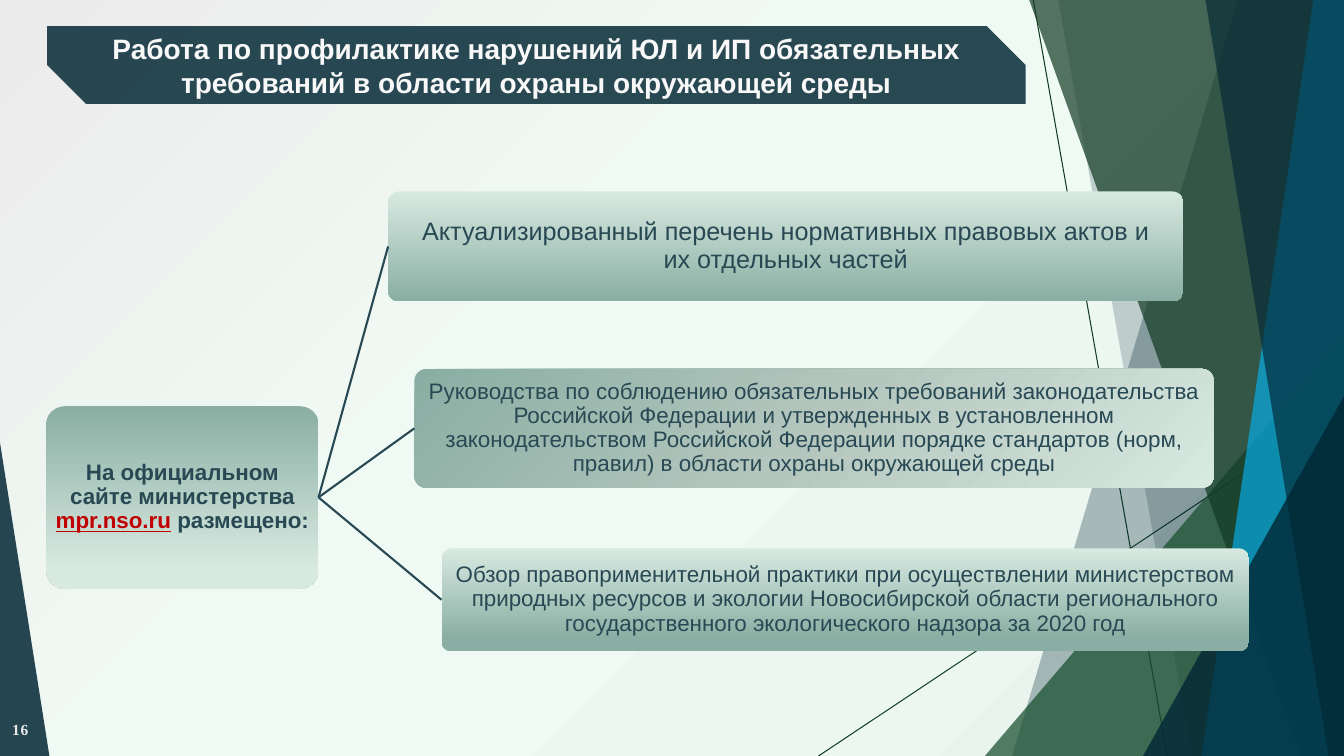
from lxml.etree import SubElement as add_element
from pptx import Presentation
from pptx.dml.color import RGBColor
from pptx.enum.shapes import MSO_CONNECTOR as Connector
from pptx.enum.shapes import MSO_SHAPE as Preset
from pptx.enum.text import MSO_ANCHOR as Anchor
from pptx.enum.text import MSO_AUTO_SIZE as AutoSize
from pptx.enum.text import PP_ALIGN as Align
from pptx.oxml.ns import qn
from pptx.util import Inches, Pt

WIDTH, HEIGHT = Inches(13.333), Inches(7.5)

NAVY = RGBColor(0x02, 0x27, 0x34)
SLATE = RGBColor(0x28, 0x49, 0x53)
FOREST = RGBColor(0x11, 0x3A, 0x22)
GREEN = RGBColor(0x17, 0x4D, 0x2D)
MOSS = RGBColor(0x14, 0x41, 0x26)
AZURE = RGBColor(0x09, 0xAB, 0xE4)
SAGE = RGBColor(0x8A, 0xAE, 0xA3)
SAGE_MID = RGBColor(0xB4, 0xC6, 0xBE)
MINT = RGBColor(0xD7, 0xE9, 0xE1)
MINT_GREY = RGBColor(0xEA, 0xF4, 0xEF)
MINT_WHITE = RGBColor(0xF0, 0xFA, 0xF4)
PALE = RGBColor(0xEB, 0xEB, 0xEB)
WHITE = RGBColor(0xF8, 0xF8, 0xF8)
RED = RGBColor(0xC0, 0x00, 0x00)

TITLE = ("Работа по профилактике нарушений ЮЛ и ИП обязательных "
         "требований в области охраны окружающей среды")
SOURCE = [("На официальном сайте министерства ", SLATE, False),
          ("mpr.nso.ru", RED, True),
          (" размещено:", SLATE, False)]
DOWNWARD = [(0, MINT), (88, SAGE)]
ITEMS = [
    ((28.88, 25.33, 59.18, 14.53), [(0, MINT), (100, SAGE)], 90, 18,
     "Актуализированный перечень нормативных правовых актов и\nих отдельных частей"),
    ((30.83, 48.8, 59.48, 15.73), [(0, SAGE), (50, SAGE_MID), (100, MINT)], 45, 16,
     "Руководства по соблюдению обязательных требований законодательства "
     "Российской Федерации и утвержденных в установленном законодательством "
     "Российской Федерации порядке стандартов (норм, правил) в области охраны "
     "окружающей среды"),
    ((32.85, 72.53, 60.08, 13.6), DOWNWARD, 90, 16,
     "Обзор правоприменительной практики при осуществлении министерством "
     "природных ресурсов и экологии Новосибирской области регионального "
     "государственного экологического надзора за 2020 год"),
]


def across(percent):
    return round(WIDTH * percent / 100)


def down(percent):
    return round(HEIGHT * percent / 100)


def area(left, top, width, height):
    return across(left), down(top), across(width), down(height)


def set_values(target, values):
    for name, value in values.items():
        setattr(target, name, value)


def paint(shape, color, opacity):
    shape.shadow.inherit = False
    shape.line.fill.background()
    shape.fill.solid()
    shape.fill.fore_color.rgb = color
    tint = shape.element.spPr.find(qn("a:solidFill"))[0]
    add_element(tint, qn("a:alpha"), val=str(opacity * 1000))


def paint_gradient(fill, owner, stops, angle=None):
    fill.gradient()
    gradient = owner.find(".//" + qn("a:gradFill"))
    for child in list(gradient):
        gradient.remove(child)
    stop_list = add_element(gradient, qn("a:gsLst"))
    for position, color in stops:
        stop = add_element(stop_list, qn("a:gs"), pos=str(position * 1000))
        add_element(stop, qn("a:srgbClr"), val=str(color))
    if angle is None:
        circle = add_element(gradient, qn("a:path"), {"path": "circle"})
        add_element(circle, qn("a:fillToRect"), l="100000", t="100000")
    else:
        add_element(gradient, qn("a:lin"), ang=str(angle * 60000), scaled="0")


def write(shape, spans, size, inset, font="Arial", bold=False, align=Align.CENTER, spacing=1.0):
    frame = shape.text_frame
    margins = ("margin_left", "margin_right", "margin_top", "margin_bottom")
    set_values(frame, dict.fromkeys(margins, Inches(inset)))
    set_values(frame, {"word_wrap": True, "auto_size": AutoSize.NONE,
                       "vertical_anchor": Anchor.MIDDLE})
    para = frame.paragraphs[0]
    set_values(para, {"alignment": align, "line_spacing": spacing})
    for text, color, underline in spans:
        for index, row in enumerate(text.split("\n")):
            if index:
                para.add_line_break()
            span = para.add_run()
            span.text = row
            set_values(span.font, {"name": font, "size": Pt(size), "bold": bold,
                                   "underline": underline})
            span.font.color.rgb = color
    return para


def add_line(page, start, end, color, weight):
    line = page.shapes.add_connector(Connector.STRAIGHT, across(start[0]), down(start[1]),
                                     across(end[0]), down(end[1]))
    line.line.color.rgb = color
    line.line.width = Pt(weight)
    add_element(line.element.spPr, qn("a:effectLst"))
    return line


def add_shard(page, top, bottom, color, opacity):
    outline = page.shapes.build_freeform(across(top), 0)
    outline.add_line_segments([(WIDTH, 0), (WIDTH, HEIGHT), (across(bottom), HEIGHT)])
    paint(outline.convert_to_shape(), color, opacity)


def add_corner(page, left, top, width, apex, color, opacity):
    corner = page.shapes.add_shape(Preset.ISOSCELES_TRIANGLE,
                                   *area(left, top, width, 100 - top))
    corner.adjustments[0] = apex
    paint(corner, color, opacity)


def add_backdrop(page):
    paint_gradient(page.background.fill, page.element,
                   [(0, MINT_GREY), (58, MINT_WHITE), (100, PALE)])
    add_line(page, (76.88, 0), (86.85, 100), FOREST, 0.75)
    add_line(page, (100, 53.73), (60.9, 100), MOSS, 0.75)
    add_shard(page, 92.1, 75.3, NAVY, 30)
    add_shard(page, 78.75, 88.72, NAVY, 20)
    add_corner(page, 73.28, 44.4, 26.72, 1, GREEN, 72)
    add_shard(page, 76.58, 96.82, FOREST, 70)
    add_shard(page, 97.72, 89.4, AZURE, 70)
    add_shard(page, 89.7, 98.85, NAVY, 65)
    add_corner(page, 85.05, 52.4, 14.95, 1, NAVY, 80)
    add_corner(page, 0, 58.53, 3.68, 0, NAVY, 85)


def add_title(page):
    place = area(3.5, 3.47, 72.82, 10.27)
    banner = page.shapes.add_shape(Preset.SNIP_2_DIAG_RECTANGLE, *place)
    banner.adjustments[0], banner.adjustments[1] = 0, 0.5
    paint(banner, NAVY, 84)
    title = page.shapes.title
    set_values(title, dict(zip(("left", "top", "width", "height"), place)))
    banner.element.addnext(title.element)
    write(title, [(TITLE, WHITE, False)], 20, 0.25, bold=True)


def add_number(page):
    box = page.shapes.add_textbox(*area(0, 93.87, 2.85, 5.33))
    para = write(box, [("16", PALE, False)], 11, 0.1, "Times New Roman", True, Align.RIGHT)
    box.text_frame.margin_left = 0
    para.runs[0].font._element.set("spc", "50")


def add_card(page, place, stops, angle, spans, size, bold=False):
    card = page.shapes.add_shape(Preset.ROUNDED_RECTANGLE, *area(*place))
    card.adjustments[0] = 0.1
    card.shadow.inherit = False
    card.line.fill.background()
    paint_gradient(card.fill, card.element, stops, angle)
    write(card, spans, size, 0.01, bold=bold, spacing=0.9)
    return card


def main():
    deck = Presentation()
    set_values(deck, {"slide_width": WIDTH, "slide_height": HEIGHT})
    page = deck.slides.add_slide(deck.slide_layouts.get_by_name("Title Only"))
    add_backdrop(page)
    add_title(page)
    add_number(page)
    source = add_card(page, (3.45, 53.73, 20.25, 24.13), [(0, SAGE), (88, MINT)], 90,
                      SOURCE, 16, bold=True)
    for place, stops, angle, size, text in ITEMS:
        card = add_card(page, place, stops, angle, [(text, SLATE, False)], size)
        branch = add_line(page, (0, 0), (1, 1), SLATE, 1.5)
        branch.begin_connect(source, 3)
        branch.end_connect(card, 1)
    deck.save("out.pptx")


if __name__ == "__main__":
    main()
